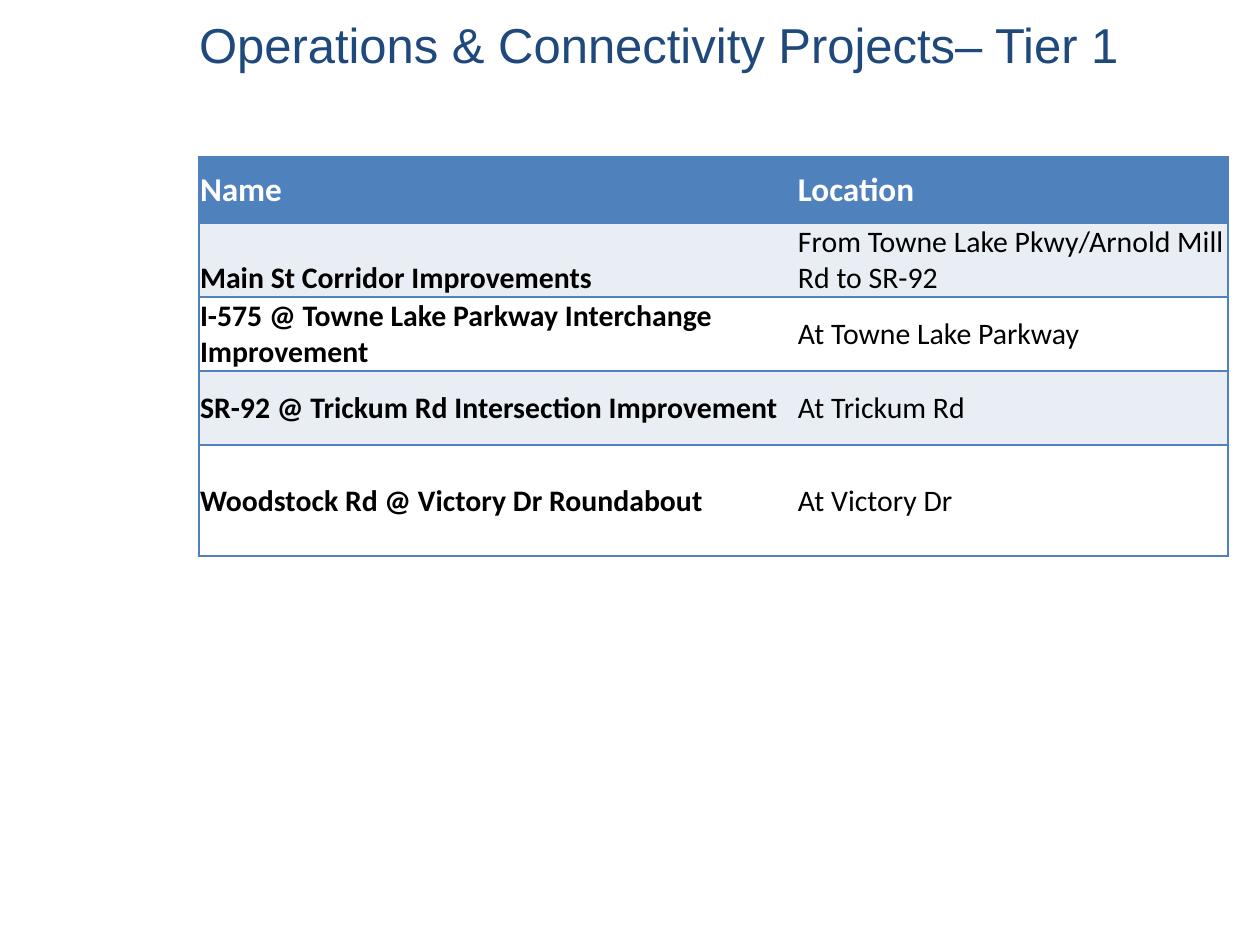
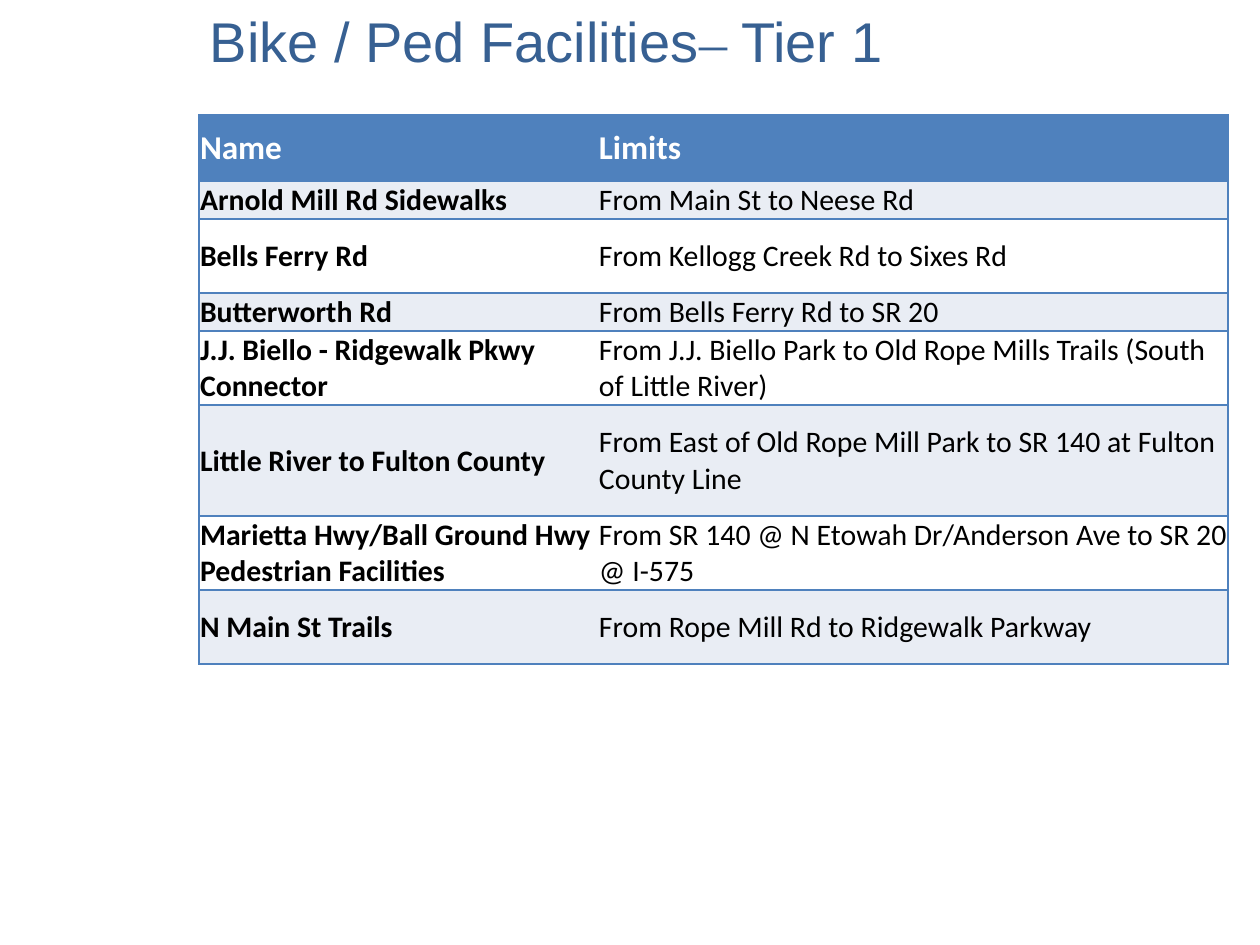
"""Builds two slides that list Tier 1 transport projects in tables."""
from dataclasses import dataclass

from lxml import etree
from pptx import Presentation
from pptx.dml.color import RGBColor
from pptx.enum.text import MSO_ANCHOR
from pptx.oxml.ns import qn
from pptx.util import Emu, Pt

MIDDLE = MSO_ANCHOR.MIDDLE
BOTTOM = MSO_ANCHOR.BOTTOM
TOP = MSO_ANCHOR.TOP

SCALE = 914400 / 126
BLANK = 6
BLUE = "4F81BD"
PALE = "E9EDF4"
WHITE = "FFFFFF"
BLACK = "000000"
SANS = "Arial"
SERIF = "Times New Roman"
BODY = "Calibri"
LEFT = 199
HEAD, ONE, TWO, THREE = 66, 38, 74, 111


@dataclass
class Run:
    """A stretch of text in one font."""
    text: str
    font: str = SANS


@dataclass
class Title:
    """A slide title with its place and style."""
    left: int
    width: int
    size: int
    color: str
    runs: list[Run]


@dataclass
class Row:
    """A project row of the table."""
    name: str
    place: str
    height: int = TWO
    anchor: MSO_ANCHOR = MIDDLE


@dataclass
class Page:
    """A slide with a title and a project table."""
    title: Title
    top: int
    cols: tuple[int, int]
    rows: list[Row]


PAGES = [
    Page(
        Title(199, 1050, 28, "1F497D",
              [Run("Operations & Connectivity Projects– Tier 1")]),
        157, (598, 431),
        [
            Row("Name", "Location", HEAD),
            Row("Main St Corridor Improvements",
                "From Towne Lake Pkwy/Arnold Mill Rd to SR-92", anchor=BOTTOM),
            Row("I-575 @ Towne Lake Parkway Interchange Improvement",
                "At Towne Lake Parkway", anchor=BOTTOM),
            Row("SR-92 @ Trickum Rd Intersection Improvement", "At Trickum Rd"),
            Row("Woodstock Rd @ Victory Dr Roundabout", "At Victory Dr", THREE),
        ],
    ),
    Page(
        Title(210, 1018, 32, "376092",
              [Run("Bike / Ped Facilities"), Run("– ", SERIF), Run("Tier 1")]),
        115, (399, 630),
        [
            Row("Name", "Limits", HEAD),
            Row("Arnold Mill Rd Sidewalks", "From Main St to Neese Rd", ONE),
            Row("Bells Ferry Rd", "From Kellogg Creek Rd to Sixes Rd"),
            Row("Butterworth Rd", "From Bells Ferry Rd to SR 20", ONE),
            Row("J.J. Biello - Ridgewalk Pkwy Connector",
                "From J.J. Biello Park to Old Rope Mills Trails (South of Little River)"),
            Row("Little River to Fulton County",
                "From East of Old Rope Mill Park to SR 140 at Fulton County Line", THREE),
            Row("Marietta Hwy/Ball Ground Hwy Pedestrian Facilities",
                "From SR 140 @ N Etowah Dr/Anderson Ave to SR 20 @ I-575"),
            Row("N Main St Trails", "From Rope Mill Rd to Ridgewalk Parkway"),
        ],
    ),
]


def px(size: int) -> Emu:
    """Turn pixels into EMU."""
    return Emu(round(size * SCALE))


def rgb(code: str) -> RGBColor:
    """Turn a hex string into a colour."""
    return RGBColor.from_string(code)


def add_run(para, run: Run, size: int, color: str, bold: bool = False) -> None:
    """Add a styled run to a paragraph."""
    part = para.add_run()
    part.text = run.text
    font = part.font
    font.name, font.size, font.bold = run.font, Pt(size), bold
    font.color.rgb = rgb(color)


def add_title(slide, title: Title) -> None:
    """Draw the slide title."""
    box = slide.shapes.add_textbox(px(title.left), px(21), px(title.width), px(111))
    frame = box.text_frame
    frame.word_wrap = True
    frame.vertical_anchor = TOP
    frame.margin_left = frame.margin_right = 0
    frame.margin_top = frame.margin_bottom = 0
    para = frame.paragraphs[0]
    para.line_spacing = Pt(30)
    for run in title.runs:
        add_run(para, run, title.size, title.color)


def add_edges(cell, inner: str) -> None:
    """Line a cell on every side but the inner one."""
    props = cell._tc.get_or_add_tcPr()
    for spot, side in enumerate(("lnL", "lnR", "lnT", "lnB")):
        line = etree.Element(qn(f"a:{side}"), w=str(Pt(1)))
        if side == inner:
            etree.SubElement(line, qn("a:noFill"))
        else:
            fill = etree.SubElement(line, qn("a:solidFill"))
            etree.SubElement(fill, qn("a:srgbClr"), val=BLUE)
        props.insert(spot, line)


def fill_cell(cell, text: str, line: int, col: int, anchor: MSO_ANCHOR) -> None:
    """Style and fill one table cell."""
    head = line == 0
    cell.margin_left = cell.margin_right = cell.margin_top = px(1)
    cell.margin_bottom = 0
    cell.vertical_anchor = anchor
    cell.fill.solid()
    cell.fill.fore_color.rgb = rgb(BLUE if head else PALE if line % 2 else WHITE)
    add_edges(cell, "lnL" if col else "lnR")
    add_run(cell.text_frame.paragraphs[0], Run(text, BODY), 19 if head else 17,
            WHITE if head else BLACK, head or col == 0)


def add_grid(slide, page: Page) -> None:
    """Draw the project table."""
    high = sum(row.height for row in page.rows)
    table = slide.shapes.add_table(len(page.rows), len(page.cols), px(LEFT),
                                   px(page.top), px(sum(page.cols)), px(high)).table
    table.first_row = table.horz_banding = False
    for col, width in enumerate(page.cols):
        table.columns[col].width = px(width)
    for line, row in enumerate(page.rows):
        table.rows[line].height = px(row.height)
        for col, text in enumerate((row.name, row.place)):
            fill_cell(table.cell(line, col), text, line, col,
                      MIDDLE if col else row.anchor)


def main() -> None:
    """Build and save the deck."""
    deck = Presentation()
    deck.slide_width, deck.slide_height = px(1260), px(945)
    for page in PAGES:
        slide = deck.slides.add_slide(deck.slide_layouts[BLANK])
        add_title(slide, page.title)
        add_grid(slide, page)
    deck.save("out.pptx")


if __name__ == "__main__":
    main()
